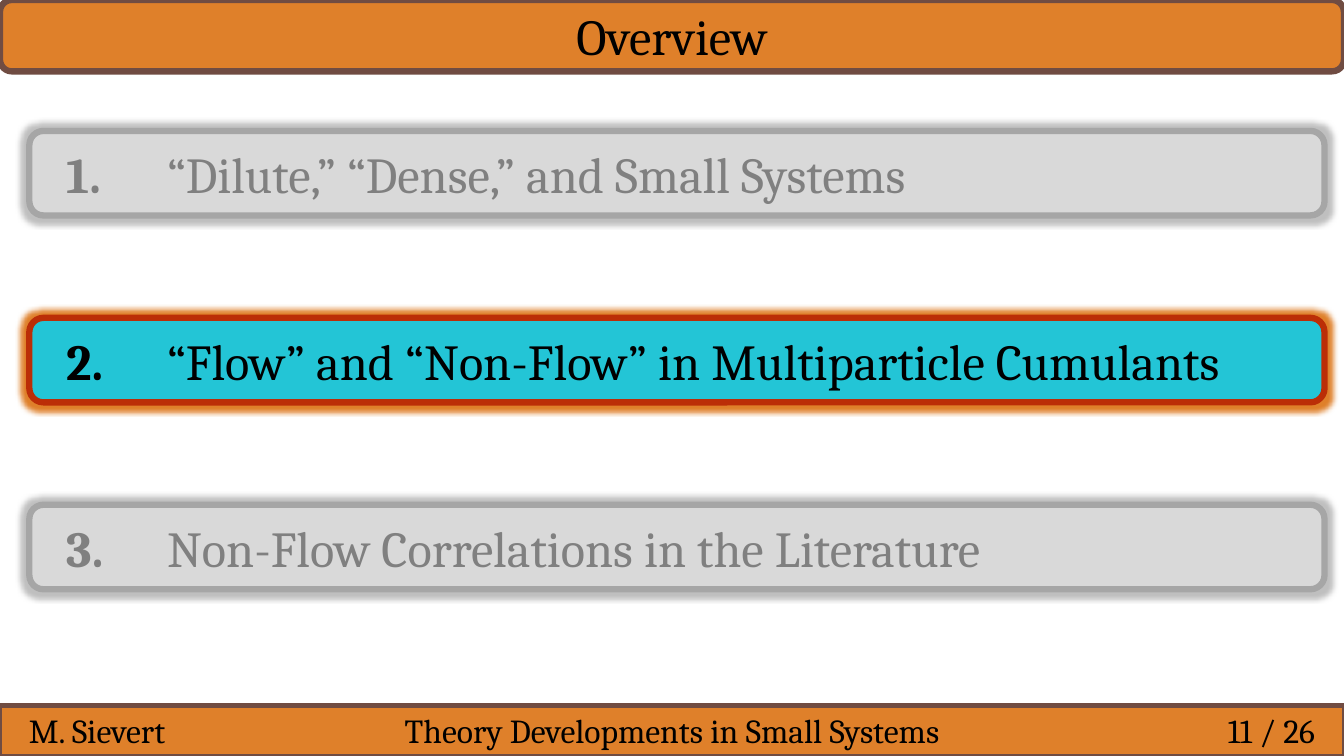
from dataclasses import dataclass

from lxml.etree import SubElement
from pptx import Presentation
from pptx.dml.color import RGBColor
from pptx.enum.shapes import MSO_SHAPE
from pptx.enum.text import MSO_ANCHOR, PP_ALIGN
from pptx.oxml.ns import qn
from pptx.util import Cm, Pt

# Content
TITLE = "Overview"
TOPICS = [
    ("1.", "“Dilute,” “Dense,” and Small Systems", "muted"),
    ("2.", "“Flow” and “Non-Flow” in Multiparticle Cumulants", "active"),
    ("3.", "Non-Flow Correlations in the Literature", "muted"),
]
FOOTER = [
    ("M. Sievert", PP_ALIGN.LEFT),
    ("Theory Developments in Small Systems", PP_ALIGN.CENTER),
    ("11 / 26", PP_ALIGN.RIGHT),
]


@dataclass(frozen=True)
class Theme:
    font: str = "Cambria"
    large: int = 36
    small: int = 24
    text: str = "000000"
    bar_fill: str = "DF802A"
    bar_line: str = "704C42"


THEME = Theme()
TOPIC_STYLES = {
    "muted": {"fill": "D9D9D9", "line": "A6A6A6", "text": "808080", "glow": "BFBFBF"},
    "active": {"fill": "23C5D6", "line": "BB2E07", "text": "000000", "glow": "DF802A"},
}

# Layout
WIDTH, HEIGHT = Cm(33.87), Cm(19.05)
TITLE_HEIGHT = Cm(1.8)
FOOTER_TOP, FOOTER_HEIGHT, FOOTER_MARGIN = Cm(17.78), Cm(1.27), Cm(0.48)
FOOTER_TEXT_HEIGHT = Cm(1.22)
TOPIC_LEFT, TOPIC_TOP, TOPIC_PITCH = Cm(0.74), Cm(3.3), Cm(4.71)
TOPIC_WIDTH, TOPIC_HEIGHT = Cm(32.64), Cm(2.13)
LABEL_LEFT, LABEL_WIDTH, LABEL_TAB = Cm(1.42), Cm(31.37), Cm(2.54)
GLOW_RADIUS = Pt(8)


def add_panel(page, kind, place, fill, line, weight):
    panel = page.shapes.add_shape(kind, *place)
    panel.shadow.inherit = False
    panel.fill.solid()
    panel.fill.fore_color.rgb = RGBColor.from_string(fill)
    panel.line.color.rgb = RGBColor.from_string(line)
    panel.line.width = Pt(weight)
    return panel


def add_glow(panel, color):
    effects = panel.element.spPr.find(qn("a:effectLst"))
    glow = SubElement(effects, qn("a:glow"), rad=str(int(GLOW_RADIUS)))
    SubElement(glow, qn("a:srgbClr"), val=color)


def add_tab(box, position):
    properties = box.text_frame.paragraphs[0]._p.get_or_add_pPr()
    tabs = SubElement(properties, qn("a:tabLst"))
    SubElement(tabs, qn("a:tab"), pos=str(int(position)), algn="l")


def write(box, spans, size, color, align=PP_ALIGN.LEFT):
    frame = box.text_frame
    frame.word_wrap = True
    frame.vertical_anchor = MSO_ANCHOR.MIDDLE
    para = frame.paragraphs[0]
    para.alignment = align
    for text, bold in spans:
        span = para.add_run()
        span.text = text
        span.font.color.rgb = RGBColor.from_string(color)
        formats = {"name": THEME.font, "size": Pt(size), "bold": bold}
        for name, value in formats.items():
            setattr(span.font, name, value)


def add_title(page):
    place = {"left": 0, "top": 0, "width": WIDTH, "height": TITLE_HEIGHT}
    bar = add_panel(page, MSO_SHAPE.ROUNDED_RECTANGLE, place.values(),
                    THEME.bar_fill, THEME.bar_line, 4.5)
    title = page.shapes.title
    for name, value in place.items():
        setattr(title, name, value)
    write(title, [(TITLE, False)], THEME.large, THEME.text, PP_ALIGN.CENTER)
    # The bar lies behind the title
    title.element.addprevious(bar.element)


def add_footer(page):
    add_panel(page, MSO_SHAPE.RECTANGLE, (0, FOOTER_TOP, WIDTH, FOOTER_HEIGHT),
              THEME.bar_fill, THEME.bar_line, 3)
    side, middle = Cm(4.5), Cm(15.5)
    columns = [
        (FOOTER_MARGIN, side),
        ((WIDTH - middle) // 2, middle),
        (WIDTH - FOOTER_MARGIN - side, side),
    ]
    for (text, align), (left, width) in zip(FOOTER, columns):
        box = page.shapes.add_textbox(left, FOOTER_TOP, width, FOOTER_TEXT_HEIGHT)
        write(box, [(text, False)], THEME.small, THEME.text, align)


def add_topics(page):
    for index, (number, topic, state) in enumerate(TOPICS):
        style = TOPIC_STYLES[state]
        top = TOPIC_TOP + index * TOPIC_PITCH
        panel = add_panel(page, MSO_SHAPE.ROUNDED_RECTANGLE,
                          (TOPIC_LEFT, top, TOPIC_WIDTH, TOPIC_HEIGHT),
                          style["fill"], style["line"], 4.5)
        add_glow(panel, style["glow"])
        label = page.shapes.add_textbox(LABEL_LEFT, top, LABEL_WIDTH, TOPIC_HEIGHT)
        add_tab(label, LABEL_TAB)
        write(label, [(number, True), ("\t" + topic, False)],
              THEME.large, style["text"])


def main():
    deck = Presentation()
    deck.slide_width, deck.slide_height = WIDTH, HEIGHT
    page = deck.slides.add_slide(deck.slide_layouts[5])
    add_title(page)
    add_footer(page)
    add_topics(page)
    deck.save("out.pptx")


if __name__ == "__main__":
    main()
